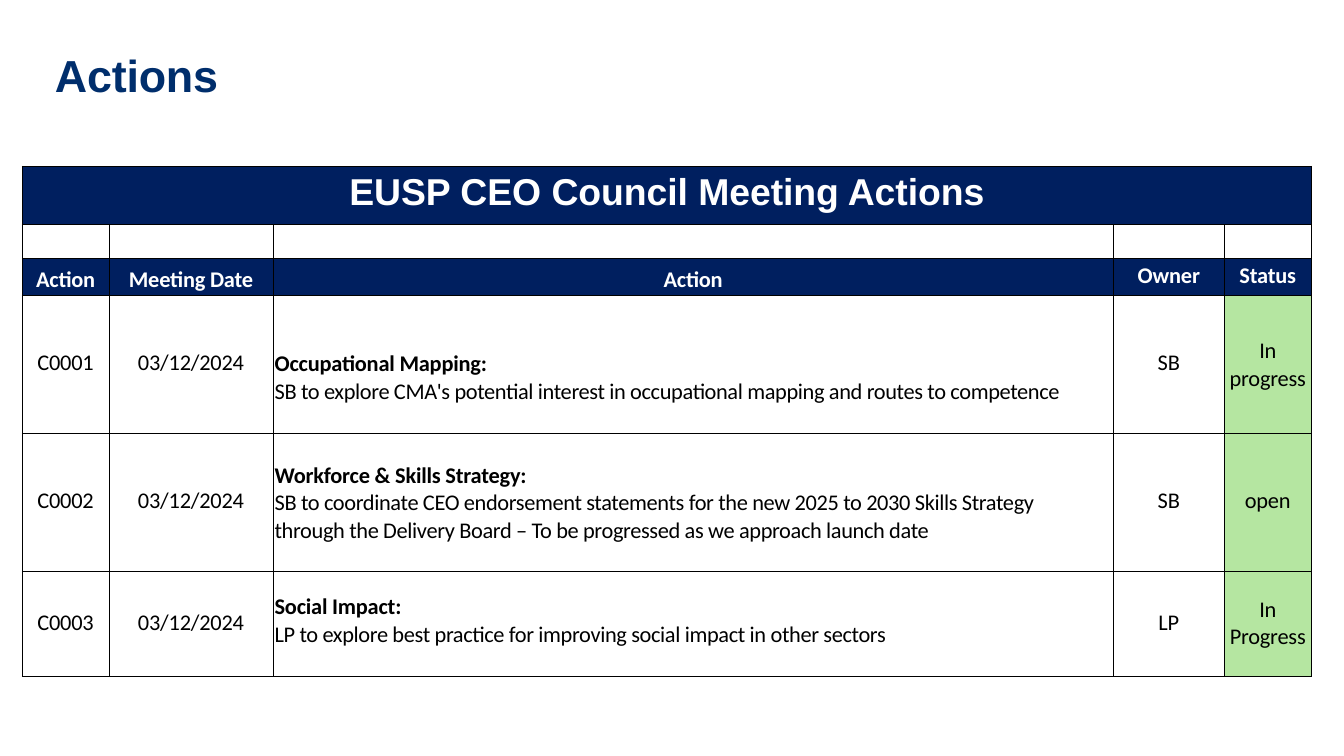
from lxml.etree import SubElement
from pptx import Presentation
from pptx.dml.color import RGBColor
from pptx.enum.text import PP_ALIGN as Align
from pptx.oxml.ns import qn
from pptx.util import Cm, Pt

BLUE = RGBColor(0x00, 0x2E, 0x6C)
NAVY = RGBColor(0x00, 0x1F, 0x5F)
GREEN = RGBColor(0xB5, 0xE6, 0xA1)
WHITE = RGBColor(0xFF, 0xFF, 0xFF)
BLACK = RGBColor(0x00, 0x00, 0x00)

TITLE = {"name": "Arial", "size": Pt(24), "bold": True, "color": BLUE}
BANNER = {"name": "Arial", "size": Pt(20), "bold": True, "color": WHITE}
HEADER = {"name": "Calibri", "size": Pt(12), "bold": True, "color": WHITE}
TOPIC = {**HEADER, "color": BLACK}
BODY = {**TOPIC, "bold": False}

COLUMN_WIDTHS = (1.64, 3.1, 15.88, 2.1, 1.64)
ROW_HEIGHTS = (1.1, 0.64, 0.7, 2.61, 2.61, 1.97)
HEADINGS = ("Action", "Meeting Date", "Action", "Owner", "Status")
HEADING_TOPS = (0.15, 0.15, 0.15, 0.08, 0.08)
ACTION_COLUMN, STATUS_COLUMN = 2, 4
ACTIONS = (
    ("C0001", "03/12/2024",
     ("Occupational Mapping:",
      "SB to explore CMA's potential interest in occupational mapping and routes to competence"),
     "SB", "In progress"),
    ("C0002", "03/12/2024",
     ("Workforce & Skills Strategy:",
      "SB to coordinate CEO endorsement statements for the new 2025 to 2030 Skills Strategy "
      "through the Delivery Board – To be progressed as we approach launch date"),
     "SB", "open"),
    ("C0003", "03/12/2024",
     ("Social Impact:",
      "LP to explore best practice for improving social impact in other sectors"),
     "LP", "In Progress"),
)
ACTION_TOPS = (
    (1.02, 1.02, 1.04, 1.02, 0.8),
    (1.02, 1.02, 0.54, 1.02, 1.02),
    (0.71, 0.71, 0.41, 0.71, 0.46),
)


def write(para, text, style, align=Align.CENTER, spacing=-0.1):
    para.alignment = align
    span = para.add_run()
    span.text = text
    for name, value in style.items():
        if name == "color":
            span.font.color.rgb = value
        else:
            setattr(span.font, name, value)
    span._r.get_or_add_rPr().set("spc", str(round(spacing * 100)))


def set_margins(holder, left=0, top=0, right=0, bottom=0):
    margins = {"left": left, "top": top, "right": right, "bottom": bottom}
    for side, value in margins.items():
        setattr(holder, f"margin_{side}", Cm(value))


def format_cell(cell):
    set_margins(cell)
    cell.fill.background()
    properties = cell._tc.get_or_add_tcPr()
    for position, side in enumerate(("lnL", "lnR", "lnT", "lnB")):
        border = properties.makeelement(qn(f"a:{side}"), {"w": str(Pt(0.5))})
        fill = SubElement(border, qn("a:solidFill"))
        SubElement(fill, qn("a:srgbClr"), val=str(BLACK))
        properties.insert(position, border)


def paint(cell, color):
    cell.fill.solid()
    cell.fill.fore_color.rgb = color


def add_title(page, left, top, width, height):
    box = page.shapes.add_textbox(Cm(left), Cm(top), Cm(width), Cm(height))
    frame = box.text_frame
    frame.word_wrap = True
    set_margins(frame, left=0.3, top=0.25)
    write(frame.paragraphs[0], "Actions", TITLE, Align.LEFT)


def fill_headings(table, row):
    for column, (text, top) in enumerate(zip(HEADINGS, HEADING_TOPS)):
        cell = table.cell(row, column)
        paint(cell, NAVY)
        set_margins(cell, top=top)
        write(cell.text_frame.paragraphs[0], text, HEADER)


def fill_action(table, row, values, tops):
    for column, (value, top) in enumerate(zip(values, tops)):
        cell = table.cell(row, column)
        frame = cell.text_frame
        set_margins(cell, top=top)
        if column == ACTION_COLUMN:
            topic, task = value
            set_margins(cell, left=0.03, top=top, right=0.3)
            write(frame.paragraphs[0], topic, TOPIC, Align.LEFT)
            write(frame.add_paragraph(), task, BODY, Align.LEFT, -0.2)
        else:
            write(frame.paragraphs[0], value, BODY)
        if column == STATUS_COLUMN:
            paint(cell, GREEN)


def add_actions_table(page, left, top, width, height):
    frame = page.shapes.add_table(len(ROW_HEIGHTS), len(COLUMN_WIDTHS),
                                  Cm(left), Cm(top), Cm(width), Cm(height))
    table = frame.table
    table.first_row = False
    table.horz_banding = False
    for column, size in zip(table.columns, COLUMN_WIDTHS):
        column.width = Cm(size)
    for row, size in zip(table.rows, ROW_HEIGHTS):
        row.height = Cm(size)
    for cell in table.iter_cells():
        format_cell(cell)

    banner = table.cell(0, 0)
    banner.merge(table.cell(0, len(COLUMN_WIDTHS) - 1))
    paint(banner, NAVY)
    set_margins(banner, top=0.1)
    write(banner.text_frame.paragraphs[0], "EUSP CEO Council Meeting Actions",
          BANNER, spacing=-0.05)

    for cell in table.rows[1].cells:
        SubElement(cell.text_frame.paragraphs[0]._p, qn("a:endParaRPr"), sz="1200")
    fill_headings(table, 2)
    for row, (values, tops) in enumerate(zip(ACTIONS, ACTION_TOPS), start=3):
        fill_action(table, row, values, tops)


def main():
    deck = Presentation()
    deck.slide_width, deck.slide_height = Cm(25.4), Cm(14.28)
    page = deck.slides.add_slide(deck.slide_layouts[6])
    add_title(page, 0.74, 0.66, 23.93, 2)
    add_actions_table(page, 0.42, 3.14, sum(COLUMN_WIDTHS), sum(ROW_HEIGHTS))
    deck.save("out.pptx")


if __name__ == "__main__":
    main()
